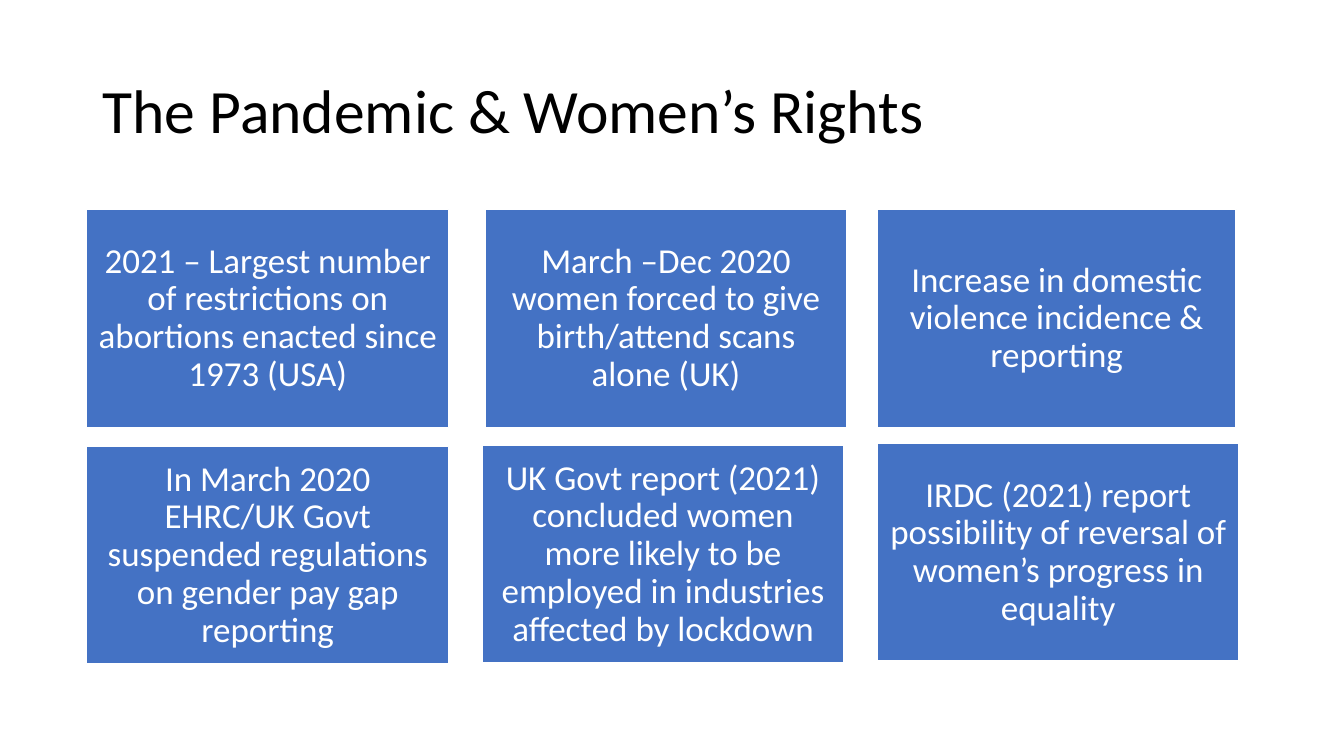
from pptx import Presentation
from pptx.dml.color import RGBColor
from pptx.enum import shapes, text
from pptx.util import Inches, Pt


def color(value):
    return RGBColor.from_string(value)


def write(box, wording, size, value, alignment):
    frame = box.text_frame
    frame.word_wrap = True
    frame.vertical_anchor = text.MSO_ANCHOR.MIDDLE
    para = frame.paragraphs[0]
    para.text = wording
    para.alignment = alignment
    para.line_spacing = 0.9
    para.font.name = "Calibri"
    para.font.size = Pt(size)
    para.font.color.rgb = color(value)
    return frame


deck = Presentation()
deck.slide_width = Inches(13.33)
deck.slide_height = Inches(7.5)
page = deck.slides.add_slide(deck.slide_layouts[6])

title = page.shapes.add_textbox(Inches(0.92), Inches(0.4), Inches(11.5), Inches(1.45))
write(title, "The Pandemic & Women’s Rights", 44, "000000", text.PP_ALIGN.LEFT)

cards = [
    (0.86, 2.08, 3.59, "2021 – Largest number of restrictions on abortions enacted since 1973 (USA)"),
    (4.81, 2.08, 3.59, "March –Dec 2020 women forced to give birth/attend scans alone (UK)"),
    (8.7, 2.08, 3.56, "Increase in domestic violence incidence & reporting"),
    (0.86, 4.43, 3.59, "In March 2020 EHRC/UK Govt suspended regulations on gender pay gap reporting"),
    (4.78, 4.42, 3.59, "UK Govt report (2021) concluded women more likely to be employed in industries affected by lockdown"),
    (8.7, 4.4, 3.59, "IRDC (2021) report possibility of reversal of women’s progress in equality"),
]
for left, top, width, wording in cards:
    card = page.shapes.add_shape(
        shapes.MSO_SHAPE.RECTANGLE, Inches(left), Inches(top), Inches(width), Inches(2.16)
    )
    card.shadow.inherit = False
    card.fill.solid()
    card.fill.fore_color.rgb = color("4472C4")
    card.line.color.rgb = color("FFFFFF")
    card.line.width = Pt(1)
    frame = write(card, wording, 25, "FFFFFF", text.PP_ALIGN.CENTER)
    frame.margin_left = frame.margin_right = Inches(0.1)
    frame.margin_top = frame.margin_bottom = Inches(0.1)

deck.save("out.pptx")
